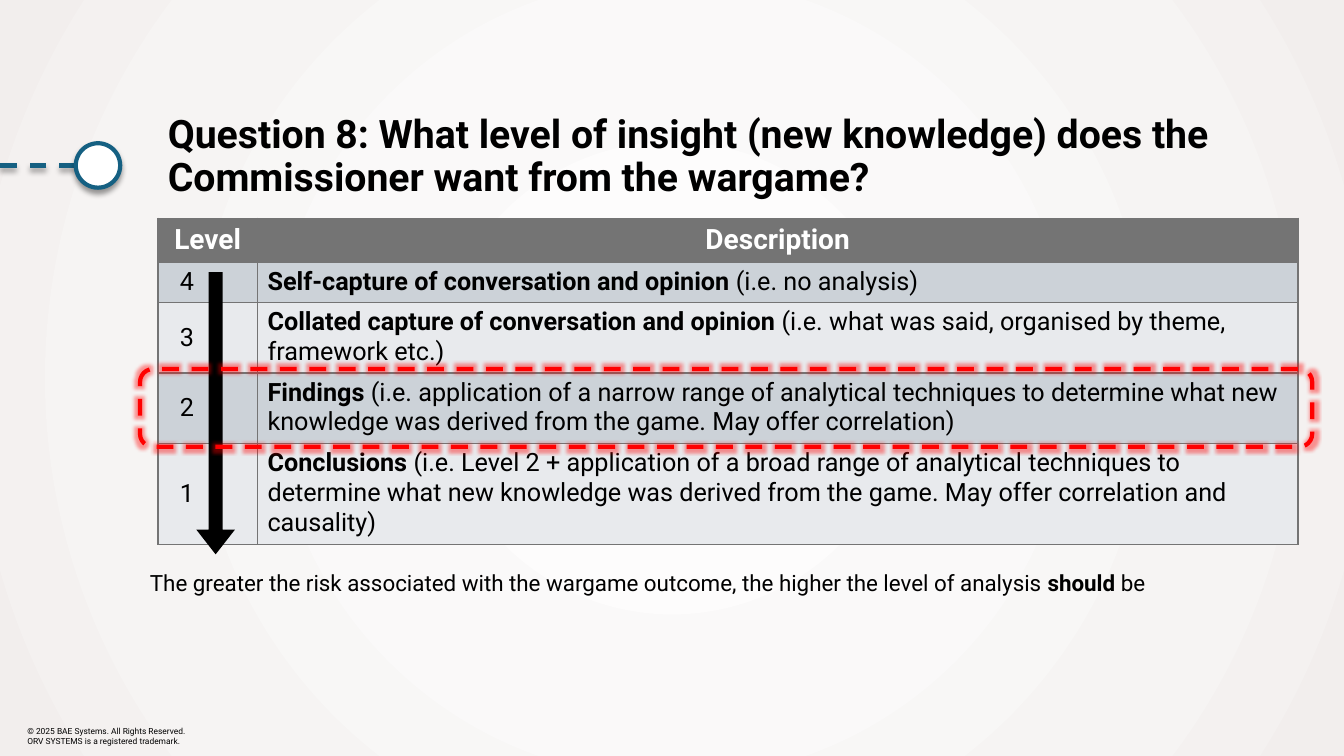
from pptx import Presentation
from pptx.dml.color import RGBColor
from pptx.enum import dml, shapes, text
from pptx.oxml import parse_xml
from pptx.oxml.ns import nsdecls
from pptx.util import Cm, Pt

FONT = "Roboto"
BLACK = RGBColor(0x00, 0x00, 0x00)
WHITE = RGBColor(0xFF, 0xFF, 0xFF)
GREY = RGBColor(0x74, 0x74, 0x74)
BAND_DARK = RGBColor(0xCC, 0xD2, 0xD8)
BAND_LIGHT = RGBColor(0xE8, 0xEA, 0xED)
TEAL = RGBColor(0x15, 0x60, 0x82)
RED = RGBColor(0xFF, 0x00, 0x00)
BACKGROUND_STOPS = [(8, "FFFFFF"), (42, "FAF9F9"), (72, "F6F4F3"), (100, "F2EEED")]

TITLE = ("Question 8: What level of insight (new knowledge) does the "
         "Commissioner want from the wargame?")
LEVELS = [
    ("4", "Self-capture of conversation and opinion", " (i.e. no analysis)"),
    ("3", "Collated capture of conversation and opinion",
     " (i.e. what was said, organised by theme, framework etc.)"),
    ("2", "Findings",
     " (i.e. application of a narrow range of analytical techniques to determine "
     "what new knowledge was derived from the game. May offer correlation)"),
    ("1", "Conclusions",
     " (i.e. Level 2 + application of a broad range of analytical techniques to "
     "determine what new knowledge was derived from the game. May offer "
     "correlation and causality)"),
]
COLUMN_WIDTHS = [2.51, 26.22]
ROW_HEIGHTS = [1.09, 1.01, 1.75, 1.75, 2.5]
COPYRIGHT = ["© 2025 BAE Systems. All Rights Reserved.",
             "ORV SYSTEMS is a registered trademark."]


def add_runs(paragraph, parts, size, color=BLACK):
    """Append (wording, bold) parts to the paragraph."""
    for wording, bold in parts:
        run = paragraph.add_run()
        run.text = wording
        run.font.name = FONT
        run.font.size = Pt(size)
        run.font.bold = bold
        run.font.color.rgb = color


def add_text_box(slide, left, top, width, height):
    text_frame = slide.shapes.add_textbox(
        Cm(left), Cm(top), Cm(width), Cm(height)).text_frame
    text_frame.word_wrap = True
    return text_frame


def add_effect(shape, effect):
    """Replace the shape's effects with the given XML."""
    properties = shape._element.spPr
    for old in properties.findall("{*}effectLst"):
        properties.remove(old)
    properties.append(parse_xml(
        f"<a:effectLst {nsdecls('a')}>{effect}</a:effectLst>"))


def style_line(shape, color, dashed=False):
    shape.line.color.rgb = color
    shape.line.width = Pt(3)
    if dashed:
        shape.line.dash_style = dml.MSO_LINE.DASH


def set_background(slide):
    slide.background.fill.solid()
    properties = slide._element.cSld.bg.bgPr
    stops = "".join(f'<a:gs pos="{position * 1000}"><a:srgbClr val="{color}"/></a:gs>'
                    for position, color in BACKGROUND_STOPS)
    gradient = parse_xml(
        f'<a:gradFill {nsdecls("a")} rotWithShape="1"><a:gsLst>{stops}</a:gsLst>'
        '<a:path path="circle"><a:fillToRect l="50000" t="50000" r="50000" b="50000"/>'
        '</a:path></a:gradFill>')
    properties.replace(properties[0], gradient)


def add_copyright(slide, left, top, width, height):
    text_frame = add_text_box(slide, left, top, width, height)
    text_frame.margin_left = text_frame.margin_right = 0
    text_frame.margin_top = text_frame.margin_bottom = 0
    text_frame.vertical_anchor = text.MSO_ANCHOR.MIDDLE
    text_frame.text = "\n".join(COPYRIGHT)
    for paragraph in text_frame.paragraphs:
        paragraph.font.size = Pt(6)
        for run in paragraph.runs:
            run.font.size = Pt(6)
            run.font.name = FONT
            run.font.color.rgb = BLACK


def format_cell(cell, fill):
    properties = cell._tc.get_or_add_tcPr()
    for side in ("lnL", "lnR", "lnT", "lnB"):
        properties.append(parse_xml(
            f'<a:{side} {nsdecls("a")} w="12700"><a:solidFill>'
            f'<a:srgbClr val="{GREY}"/></a:solidFill></a:{side}>'))
    cell.fill.solid()
    cell.fill.fore_color.rgb = fill


def add_level_table(slide, left, top):
    table = slide.shapes.add_table(
        len(ROW_HEIGHTS), len(COLUMN_WIDTHS), Cm(left), Cm(top),
        Cm(sum(COLUMN_WIDTHS)), Cm(sum(ROW_HEIGHTS))).table
    table.horz_banding = False
    for column, width in zip(table.columns, COLUMN_WIDTHS):
        column.width = Cm(width)
    for row, height in zip(table.rows, ROW_HEIGHTS):
        row.height = Cm(height)

    for cell, heading in zip(table.rows[0].cells, ("Level", "Description")):
        format_cell(cell, GREY)
        paragraph = cell.text_frame.paragraphs[0]
        paragraph.alignment = text.PP_ALIGN.CENTER
        add_runs(paragraph, [(heading, True)], 20, WHITE)

    for index, (level, name, detail) in enumerate(LEVELS):
        level_cell, description_cell = table.rows[index + 1].cells
        for cell in (level_cell, description_cell):
            format_cell(cell, BAND_LIGHT if index % 2 else BAND_DARK)
        level_cell.vertical_anchor = text.MSO_ANCHOR.MIDDLE
        level_cell.margin_left = Cm(0.55)
        add_runs(level_cell.text_frame.paragraphs[0], [(level, False)], 18)
        add_runs(description_cell.text_frame.paragraphs[0],
                 [(name, True), (detail, False)], 18)


def add_title_marker(slide, left, top, size):
    """Draw a dashed line from the slide edge to a circle."""
    middle = Cm(top + size / 2)
    line = slide.shapes.add_connector(
        shapes.MSO_CONNECTOR.STRAIGHT, Cm(left), middle, 0, middle)
    style_line(line, TEAL, dashed=True)
    circle = slide.shapes.add_shape(
        shapes.MSO_SHAPE.OVAL, Cm(left), Cm(top), Cm(size), Cm(size))
    circle.fill.solid()
    circle.fill.fore_color.rgb = WHITE
    style_line(circle, TEAL)
    for shape in (line, circle):
        add_effect(shape, '<a:outerShdw blurRad="50800" dist="38100" dir="5400000" '
                          'rotWithShape="0"><a:srgbClr val="000000">'
                          '<a:alpha val="40000"/></a:srgbClr></a:outerShdw>')


def add_title(slide, left, top, width, height):
    paragraph = add_text_box(slide, left, top, width, height).paragraphs[0]
    paragraph.line_spacing = 0.9
    add_runs(paragraph, [(TITLE, True)], 28)


def add_conclusion(slide, left, top, width, height):
    text_frame = add_text_box(slide, left, top, width, height)
    add_runs(text_frame.paragraphs[0], [
        ("The greater the risk associated with the wargame outcome, "
         "the higher the level of analysis ", False),
        ("should", True), (" be", False)], 16)


def add_level_arrow(slide, left, top, width, height):
    arrow = slide.shapes.add_shape(
        shapes.MSO_SHAPE.DOWN_ARROW, Cm(left), Cm(top), Cm(width), Cm(height))
    arrow.adjustments[0] = 0.36
    arrow.adjustments[1] = 0.64
    arrow.fill.solid()
    arrow.fill.fore_color.rgb = BLACK
    arrow.line.fill.background()
    arrow.shadow.inherit = False


def add_highlight(slide, left, top, width, height):
    frame = slide.shapes.add_shape(
        shapes.MSO_SHAPE.ROUNDED_RECTANGLE, Cm(left), Cm(top), Cm(width), Cm(height))
    frame.fill.background()
    style_line(frame, RED, dashed=True)
    add_effect(frame, f'<a:glow rad="63500"><a:srgbClr val="{RED}">'
                      '<a:alpha val="40000"/></a:srgbClr></a:glow>')


def main():
    presentation = Presentation()
    presentation.slide_width = Cm(33.87)
    presentation.slide_height = Cm(19.05)
    slide = presentation.slides.add_slide(presentation.slide_layouts[6])
    set_background(slide)
    add_copyright(slide, 0.69, 18.14, 4.55, 0.81)
    add_level_table(slide, 3.98, 5.5)
    add_title_marker(slide, 1.91, 3.61, 1.12)
    add_title(slide, 3.98, 2.77, 27.97, 2.74)
    add_conclusion(slide, 3.53, 14.22, 25.65, 0.94)
    add_level_arrow(slide, 4.95, 6.86, 0.97, 7.11)
    add_highlight(slide, 3.53, 9.3, 29.54, 1.96)
    presentation.save("out.pptx")


if __name__ == "__main__":
    main()
